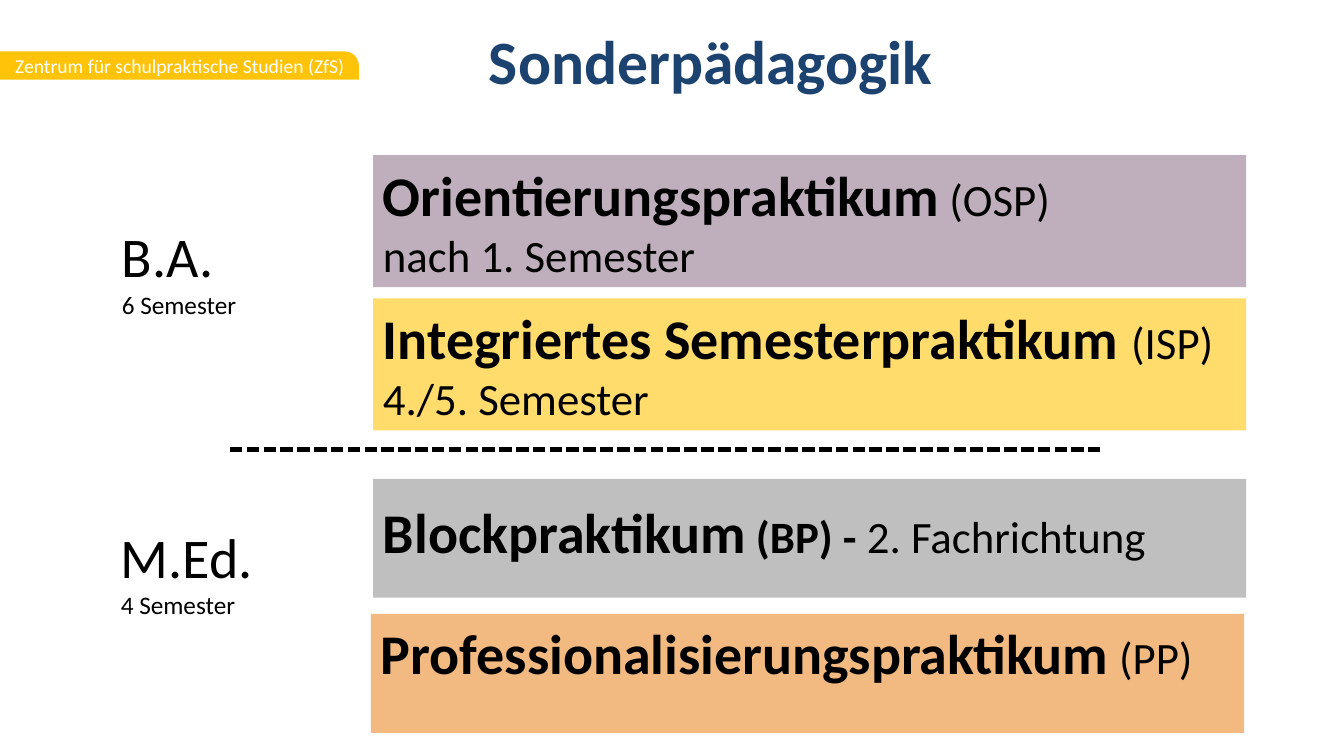
import pptx
import pptx.dml.color
import pptx.enum.dml
import pptx.enum.shapes
import pptx.enum.text
import pptx.oxml.ns
import pptx.util
import lxml.etree

Inches = pptx.util.Inches
SHAPES = pptx.enum.shapes.MSO_SHAPE
ANCHOR = pptx.enum.text.MSO_ANCHOR
ALIGN = pptx.enum.text.PP_ALIGN

THEME = {
    "font": "Calibri",
    "black": "000000", "white": "FFFFFF", "navy": "1C426F", "gold": "FFC40A",
    "mauve": "BFAEBB", "yellow": "FFDC6C", "grey": "BFBFBF", "orange": "F2B981",
    "title": 44, "large": 40, "medium": 32, "small": 18, "banner": 14,
}

BANNER = "Zentrum für schulpraktische Studien (ZfS)"
TITLE = "Sonderpädagogik"

DEGREES = [
    (1.11, 2.15, 1.55, "B.A.", "6 Semester"),
    (1.10, 5.13, 2.25, "M.Ed.", "4 Semester"),
]

INTERNSHIPS = [
    (3.70, 1.54, 1.31, "mauve", 0.05, [
        [("Orientierungspraktikum", "large", True), (" (OSP)", "medium", False)],
        [("nach 1. Semester", "medium", False)]]),
    (3.70, 2.96, 1.31, "yellow", 0.05, [
        [("Integriertes Semesterpraktikum ", "large", True), ("(ISP)", "medium", False)],
        [("4./5. Semester", "medium", False)]]),
    (3.70, 4.75, 1.18, "grey", 0.19, [
        [("Blockpraktikum", "large", True), (" (BP) - ", "medium", True),
         ("2. Fachrichtung", "medium", False)]]),
    (3.68, 6.09, 1.18, "orange", 0.05, [
        [("Professionalisierungspraktikum", "large", True), (" (PP)", "medium", False)]]),
]
INTERNSHIP_WIDTH = 8.66
DIVIDER_LEFT, DIVIDER_RIGHT, DIVIDER_TOP = 2.28, 10.91, 4.46


def colour(name):
    return pptx.dml.color.RGBColor.from_string(THEME[name])


def write(box, paragraphs, ink="black", align=ALIGN.LEFT, anchor=ANCHOR.TOP):
    frame = box.text_frame
    frame.word_wrap = True
    frame.vertical_anchor = anchor
    for index, spans in enumerate(paragraphs):
        para = frame.add_paragraph() if index else frame.paragraphs[0]
        para.alignment = align
        para.font.name = THEME["font"]
        para.font.color.rgb = colour(ink)
        uniform = len({span[1:] for span in spans}) == 1
        for text, size, bold in spans:
            run = para.add_run()
            run.text = text
            font = para.font if uniform else run.font
            font.size = pptx.util.Pt(THEME[size])
            font.bold = bold
    return frame


def add_panel(slide, kind, bounds, fill):
    panel = slide.shapes.add_shape(kind, *map(Inches, bounds))
    panel.shadow.inherit = False
    panel.fill.solid()
    panel.fill.fore_color.rgb = colour(fill)
    panel.line.fill.background()
    return panel


def add_text_box(slide, bounds):
    return slide.shapes.add_textbox(*map(Inches, bounds))


def add_divider(slide):
    divider = slide.shapes.add_connector(
        pptx.enum.shapes.MSO_CONNECTOR.STRAIGHT,
        Inches(DIVIDER_LEFT), Inches(DIVIDER_TOP),
        Inches(DIVIDER_RIGHT), Inches(DIVIDER_TOP))
    divider.line.color.rgb = colour("black")
    divider.line.width = pptx.util.Pt(3)
    divider.line.dash_style = pptx.enum.dml.MSO_LINE.SQUARE_DOT
    lxml.etree.SubElement(divider._element.spPr, pptx.oxml.ns.qn("a:effectLst"))


def main():
    deck = pptx.Presentation()
    deck.slide_width, deck.slide_height = Inches(13.33), Inches(7.5)
    page = deck.slides.add_slide(deck.slide_layouts[6])

    banner = add_panel(page, SHAPES.ROUND_1_RECTANGLE, (0, 0.51, 3.56, 0.28), "gold")
    banner.adjustments[0] = 0.5
    write(banner, [[(BANNER, "banner", False)]], "white", ALIGN.RIGHT, ANCHOR.MIDDLE)

    add_divider(page)

    for left, top, width, degree, duration in DEGREES:
        box = add_text_box(page, (left, top, width, 1.08))
        write(box, [[(degree, "large", False)], [(duration, "small", False)]])

    title = add_text_box(page, (4.85, 0.23, 6.33, 0.81))
    frame = write(title, [[(TITLE, "title", True)]], "navy")
    frame.margin_left = frame.margin_right = frame.margin_top = frame.margin_bottom = 0

    for left, top, height, fill, inset, paragraphs in INTERNSHIPS:
        panel = add_panel(page, SHAPES.RECTANGLE, (left, top, INTERNSHIP_WIDTH, height), fill)
        write(panel, paragraphs).margin_top = Inches(inset)

    deck.save("out.pptx")


if __name__ == "__main__":
    main()
